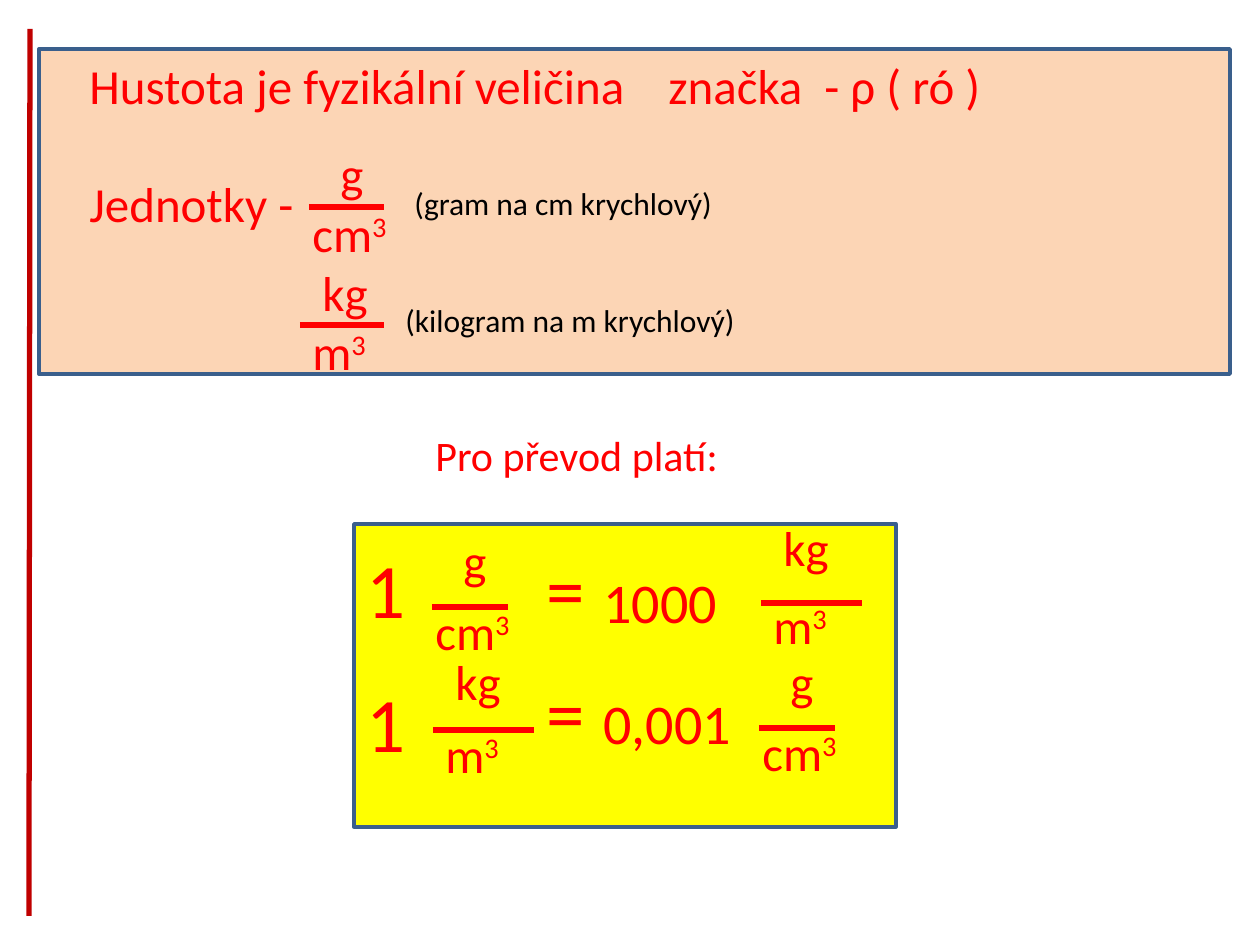
from dataclasses import dataclass

from lxml.etree import SubElement
from pptx import Presentation
from pptx.dml.color import RGBColor
from pptx.enum.shapes import MSO_CONNECTOR, MSO_SHAPE
from pptx.enum.text import MSO_ANCHOR, PP_ALIGN
from pptx.oxml.ns import qn
from pptx.util import Emu, Pt


@dataclass(frozen=True)
class Theme:
    font: str = "Calibri"
    red: str = "FF0000"
    black: str = "000000"
    margin: str = "C00000"
    border: str = "3A5F8C"
    peach: str = "FCD5B5"
    yellow: str = "FFFF00"
    note: int = 18
    lead: int = 24
    body: int = 28
    number: int = 32
    symbol: int = 44
    bar: int = 3


THEME = Theme()
PX = 914400 // 126

# left, top, width, height, fill, border in points
PANELS = [
    (39, 49, 1191, 325, THEME.peach, 2.25),
    (354, 524, 542, 303, THEME.yellow, 2),
]
DEFINITION = ["Hustota je fyzikální veličina\tznačka\t- ρ ( ró )", "Jednotky -"]
DEFINITION_BOX = (77, 49, 1070, 190)
DEFINITION_TABS = (579, 735)

# text, left, top, width, height, type size, colour
LABELS = [
    ("(gram na cm krychlový)", 402, 178, 354, 50, THEME.note, THEME.black),
    ("(kilogram na m krychlový)", 393, 295, 444, 50, THEME.note, THEME.black),
    ("Pro převod platí:", 423, 423, 403, 63, THEME.lead, THEME.red),
    ("1", 354, 535, 79, 131, THEME.symbol, THEME.red),
    ("=", 534, 535, 79, 131, THEME.symbol, THEME.red),
    ("1000", 591, 561, 169, 100, THEME.number, THEME.red),
    ("1", 354, 669, 79, 131, THEME.symbol, THEME.red),
    ("=", 534, 658, 79, 131, THEME.symbol, THEME.red),
    ("0,001", 591, 682, 214, 100, THEME.number, THEME.red),
]

# text, shift from the bar's left end, width; the denominator is cubed
UNITS = {
    "g/cm³": (("g", 19, 66), ("cm", -9, 122)),
    "kg/m³": (("kg", 10, 112), ("m", 0, 112)),
}
# unit, bar left, bar y, bar length, numerator rise, denominator rise, box height
FRACTIONS = [
    ("g/cm³", 309, 207, 75, 70, 10, 72),
    ("kg/m³", 300, 325, 84, 69, 10, 72),
    ("g/cm³", 432, 607, 76, 83, 12, 88),
    ("kg/m³", 761, 603, 101, 92, 14, 88),
    ("g/cm³", 759, 728, 76, 83, 12, 88),
    ("kg/m³", 433, 730, 101, 85, 12, 88),
]
MARGIN_LINE = (30, 29, 29, 916)


def px(*lengths):
    return [Emu(length * PX) for length in lengths]


def add_panel(slide, left, top, width, height, fill, border):
    panel = slide.shapes.add_shape(MSO_SHAPE.RECTANGLE, *px(left, top, width, height))
    panel.shadow.inherit = False
    panel.fill.solid()
    panel.fill.fore_color.rgb = RGBColor.from_string(fill)
    panel.line.color.rgb = RGBColor.from_string(THEME.border)
    panel.line.width = Pt(border)


def add_line(slide, ends, color):
    line = slide.shapes.add_connector(MSO_CONNECTOR.STRAIGHT, *px(*ends))
    line.line.color.rgb = RGBColor.from_string(color)
    line.line.width = Pt(THEME.bar)
    SubElement(line._element.spPr, qn("a:effectLst"))


def add_run(paragraph, text, size, color):
    run = paragraph.add_run()
    run.text = text
    for name, value in {"name": THEME.font, "size": Pt(size)}.items():
        setattr(run.font, name, value)
    run.font.color.rgb = RGBColor.from_string(color)
    return run


def add_text(slide, lines, box, size, color):
    frame = slide.shapes.add_textbox(*px(*box)).text_frame
    for name, value in {"word_wrap": True, "vertical_anchor": MSO_ANCHOR.TOP}.items():
        setattr(frame, name, value)
    for index, line in enumerate(lines):
        paragraph = frame.add_paragraph() if index else frame.paragraphs[0]
        paragraph.alignment = PP_ALIGN.LEFT
        add_run(paragraph, line, size, color)
    return frame.paragraphs


def add_definition(slide):
    first, second = add_text(slide, DEFINITION, DEFINITION_BOX, THEME.body, THEME.red)
    second.space_before = Pt(34)
    tabs = SubElement(first._p.get_or_add_pPr(), qn("a:tabLst"))
    for stop in px(*DEFINITION_TABS):
        SubElement(tabs, qn("a:tab"), pos=str(stop), algn="l")


def add_fraction(slide, unit, left, bar_y, length, top_rise, bottom_rise, height):
    paragraph = None
    for (text, shift, width), rise in zip(UNITS[unit], (top_rise, bottom_rise)):
        box = (left + shift, bar_y - rise, width, height)
        paragraph = add_text(slide, [text], box, THEME.body, THEME.red)[0]
    cube = add_run(paragraph, "3", THEME.body, THEME.red)
    cube.font._element.set("baseline", "30000")
    add_line(slide, (left, bar_y, left + length, bar_y), THEME.red)


def main():
    deck = Presentation()
    deck.slide_width, deck.slide_height = px(1260, 945)
    slide = deck.slides.add_slide(deck.slide_layouts[6])
    for panel in PANELS:
        add_panel(slide, *panel)
    add_definition(slide)
    for text, left, top, width, height, size, color in LABELS:
        add_text(slide, [text], (left, top, width, height), size, color)
    for fraction in FRACTIONS:
        add_fraction(slide, *fraction)
    add_line(slide, MARGIN_LINE, THEME.margin)
    deck.save("out.pptx")


if __name__ == "__main__":
    main()
